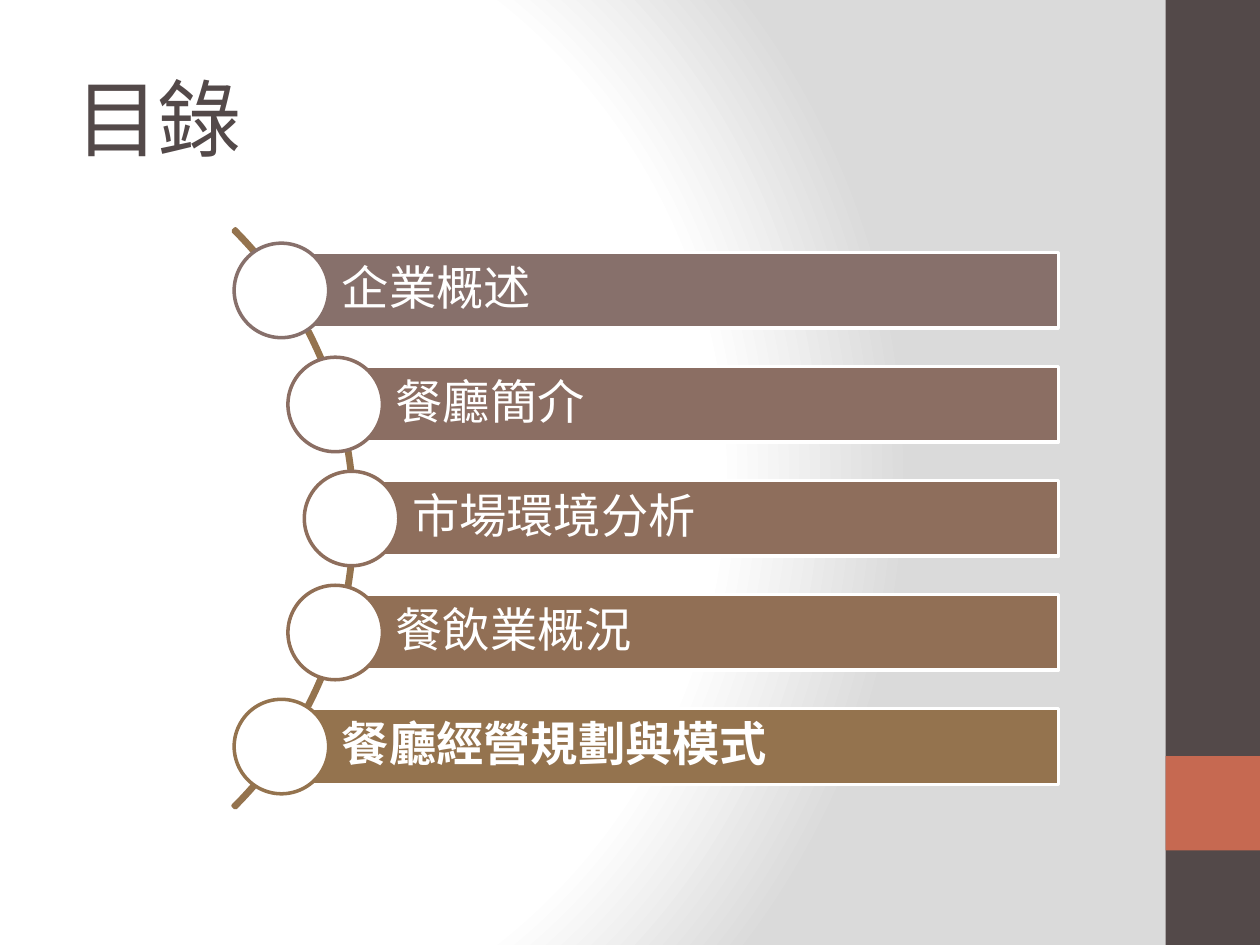
from dataclasses import dataclass
from math import sqrt

from pptx import Presentation
from pptx.dml.color import RGBColor
from pptx.enum.shapes import MSO_SHAPE
from pptx.enum.text import MSO_ANCHOR, PP_ALIGN
from pptx.oxml import parse_xml
from pptx.oxml.ns import nsdecls, qn
from pptx.util import Inches, Pt

CELL = 0.25  # inches; the slide is a grid of 40 columns and 30 rows
COLUMNS, ROWS = 40, 30

WHITE = RGBColor(0xFF, 0xFF, 0xFF)
GREY = RGBColor(0xDA, 0xDA, 0xDA)
DARK = RGBColor(0x53, 0x49, 0x49)
ACCENT = RGBColor(0xC6, 0x69, 0x51)
BRONZE = RGBColor(0x94, 0x73, 0x4E)

TITLE_FONT = {"name": "Noto Sans CJK SC", "size": Pt(48)}
TOPIC_FONT = {"name": "Calibri", "size": Pt(27)}
TOPICS = [
    ("企業概述", RGBColor(0x87, 0x70, 0x6B), False),
    ("餐廳簡介", RGBColor(0x8B, 0x6E, 0x63), False),
    ("市場環境分析", RGBColor(0x8E, 0x6E, 0x5C), False),
    ("餐飲業概況", RGBColor(0x91, 0x6F, 0x55), False),
    ("餐廳經營規劃與模式", BRONZE, True),
]


@dataclass
class Box:
    """A rectangle in grid columns and rows."""
    left: float
    top: float
    width: float
    height: float

    def lengths(self):
        return [Inches(cells * CELL)
                for cells in (self.left, self.top, self.width, self.height)]


def set_format(target, values):
    for name, value in values.items():
        setattr(target, name, value)


def add_shape(slide, kind, box, fill=None, line=None):
    shape = slide.shapes.add_shape(kind, *box.lengths())
    shape.shadow.inherit = False
    for part, color in ((shape.fill, fill), (shape.line.fill, line)):
        if color is None:
            part.background()
        else:
            part.solid()
            part.fore_color.rgb = color
    if line is not None:
        shape.line.width = Pt(2)
    return shape


def write_text(shape, text, font_values, color, frame_values):
    frame = shape.text_frame
    set_format(frame, {"word_wrap": True, "vertical_anchor": MSO_ANCHOR.MIDDLE,
                       **frame_values})
    paragraph = frame.paragraphs[0]
    paragraph.alignment = PP_ALIGN.LEFT
    run = paragraph.add_run()
    run.text = text
    set_format(run.font, font_values)
    run.font.color.rgb = color
    return paragraph, run


def set_background(slide):
    slide.background.fill.solid()
    properties = slide.element.find(".//" + qn("p:bgPr"))
    stops = "".join(
        f'<a:gs pos="{position * 1000}"><a:srgbClr val="{color}"/></a:gs>'
        for position, color in ((0, WHITE), (75, WHITE), (100, GREY)))
    gradient = parse_xml(
        f'<a:gradFill {nsdecls("a")} rotWithShape="1"><a:gsLst>{stops}</a:gsLst>'
        '<a:path path="circle">'
        '<a:fillToRect l="20000" t="50000" r="100000" b="50000"/>'
        '</a:path></a:gradFill>')
    properties.replace(properties[0], gradient)


def add_sidebar(slide, box):
    add_shape(slide, MSO_SHAPE.RECTANGLE, box, DARK)
    square = Box(box.left, box.top + box.height * 0.8, box.width, box.width)
    add_shape(slide, MSO_SHAPE.RECTANGLE, square, ACCENT)


def add_title(slide, box, text):
    title = slide.shapes.add_textbox(*box.lengths())
    _, run = write_text(title, text, TITLE_FONT, DARK, {})
    properties = run.font._element
    properties.set("spc", "-100")
    properties.append(parse_xml(
        f'<a:ea {nsdecls("a")} typeface="{TITLE_FONT["name"]}"/>'))


def add_topic(slide, center_x, center_y, right, diameter, topic):
    text, color, bold = topic
    # Bar from the circle's centre to the right edge
    height = diameter * 0.8
    bar_box = Box(center_x, center_y - height / 2, right - center_x, height)
    bar = add_shape(slide, MSO_SHAPE.RECTANGLE, bar_box, color, WHITE)
    inset = Inches(0.07)
    paragraph, _ = write_text(
        bar, text, {**TOPIC_FONT, "bold": bold}, WHITE,
        {"margin_left": Inches(0.48), "margin_top": inset,
         "margin_right": inset, "margin_bottom": inset})
    paragraph.line_spacing = 0.9
    # Circle over the bar's left end
    circle_box = Box(center_x - diameter / 2, center_y - diameter / 2,
                     diameter, diameter)
    add_shape(slide, MSO_SHAPE.OVAL, circle_box, WHITE, color)


def add_topic_arc(slide, box, topics):
    # Arc of 90 degrees, its centre to the left of the box
    radius, ring_radius = 13, 12.88
    arc_x, arc_y = box.left - 9.12, box.top + box.height / 2
    arc_box = Box(arc_x - radius, arc_y - radius, radius * 2, radius * 2)
    arc = add_shape(slide, MSO_SHAPE.BLOCK_ARC, arc_box, line=BRONZE)
    for index, value in enumerate((189, 27, 0.004)):
        arc.adjustments[index] = value
    # Topics at equal steps down the arc
    step, diameter = 3.62, 3
    for index, topic in enumerate(topics):
        offset = (index - (len(topics) - 1) / 2) * step
        center_x = arc_x + sqrt(ring_radius ** 2 - offset ** 2)
        add_topic(slide, center_x, arc_y + offset, box.left + box.width,
                  diameter, topic)


def main():
    presentation = Presentation()
    set_format(presentation, {"slide_width": Inches(COLUMNS * CELL),
                              "slide_height": Inches(ROWS * CELL)})
    slide = presentation.slides.add_slide(presentation.slide_layouts[6])
    set_background(slide)
    add_sidebar(slide, Box(37, 0, 3, ROWS))
    add_title(slide, Box(2, 1.2, 33.32, 5), "目錄")
    add_topic_arc(slide, Box(7.4, 7.2, 26.2, 18.52), TOPICS)
    presentation.save("out.pptx")


if __name__ == "__main__":
    main()
